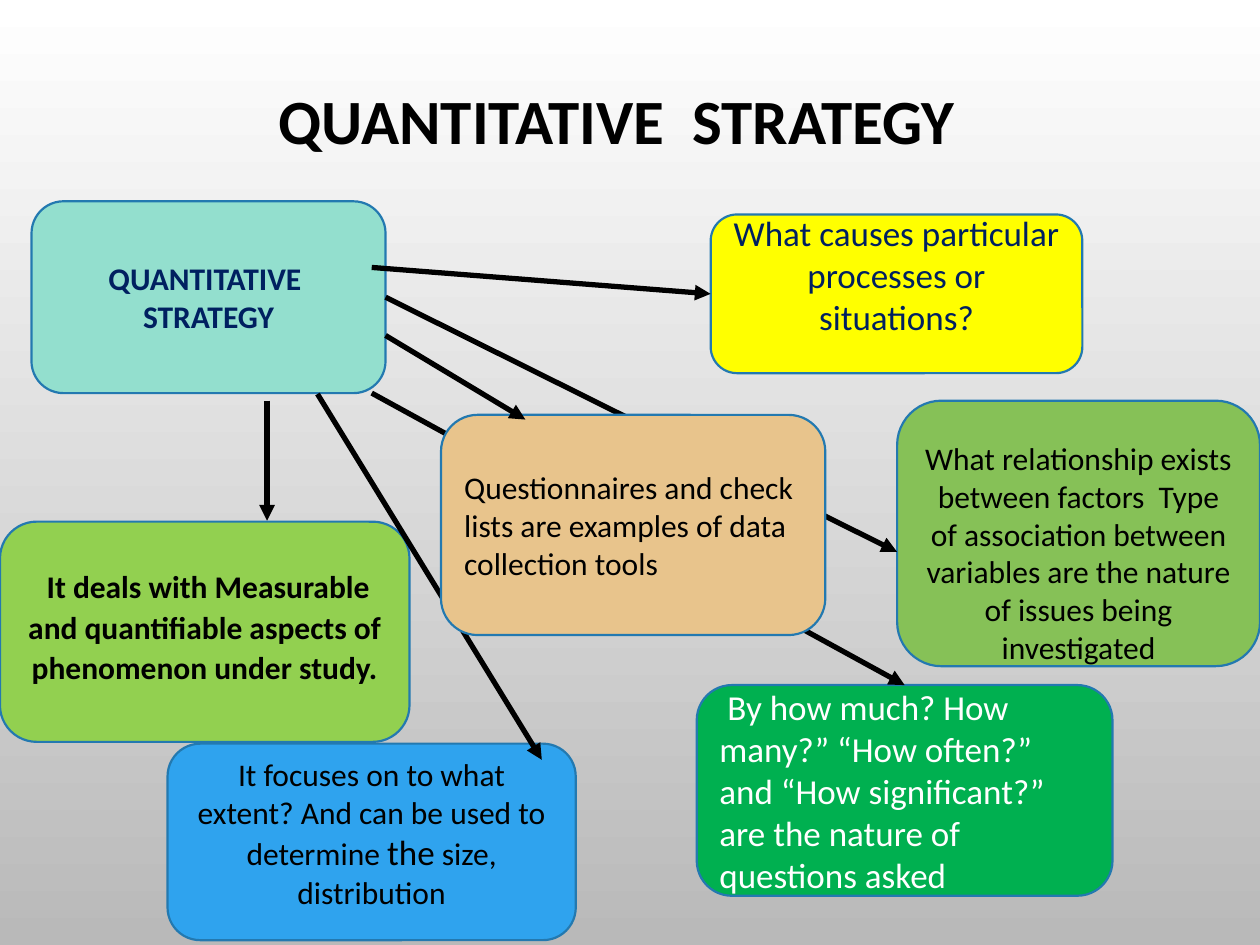
import pptx
import pptx.util
from lxml import etree
from pptx.dml.color import RGBColor
from pptx.enum.shapes import MSO_CONNECTOR, MSO_SHAPE
from pptx.enum.text import MSO_ANCHOR, PP_ALIGN
from pptx.oxml.ns import qn

WIDTH, HEIGHT = pptx.util.Inches(10), pptx.util.Inches(7.5)
FONT = "Calibri"
TOP, LEFT, RIGHT = 0, 1, 3

BLACK = RGBColor(0x00, 0x00, 0x00)
WHITE = RGBColor(0xFF, 0xFF, 0xFF)
GRAY = RGBColor(0xB9, 0xB9, 0xB9)
NAVY = RGBColor(0x00, 0x20, 0x60)
OUTLINE = RGBColor(0x23, 0x79, 0xB0)
TEAL = RGBColor(0x93, 0xDF, 0xCE)
YELLOW = RGBColor(0xFF, 0xFF, 0x00)
LIME = RGBColor(0x92, 0xD0, 0x50)
GREEN = RGBColor(0x00, 0xB0, 0x50)
SAGE = RGBColor(0x86, 0xC1, 0x57)
BLUE = RGBColor(0x2F, 0xA3, 0xEE)
SAND = RGBColor(0xE8, 0xC4, 0x8C)


def across(percent):
    return round(WIDTH * percent / 100)


def down(percent):
    return round(HEIGHT * percent / 100)


def place(left, top, width, height):
    """Turn percentages of the slide into lengths."""
    return across(left), down(top), across(width), down(height)


def format_paragraph(paragraph, size, color, bold, align, spacing=None):
    paragraph.alignment = align
    paragraph.line_spacing = spacing
    font = paragraph.font
    font.name, font.bold = FONT, bold
    font.size = pptx.util.Pt(size)
    font.color.rgb = color


def paint_background(slide):
    fill = slide.background.fill
    fill.gradient()
    fill.gradient_angle = 270
    for stop, color, position in zip(fill.gradient_stops, (WHITE, GRAY), (0, 1)):
        stop.color.rgb = color
        stop.position = position


def add_title(slide, text):
    title = slide.shapes.title
    title.left, title.top, title.width, title.height = place(2.5, 7.5, 92.9, 11.2)
    title.text_frame.text = text
    title.text_frame.vertical_anchor = MSO_ANCHOR.MIDDLE
    format_paragraph(title.text_frame.paragraphs[0], 36, BLACK, True,
                     PP_ALIGN.CENTER, 0.9)


def add_card(slide, area, fill, text, size=18, color=BLACK, bold=False,
             align=PP_ALIGN.CENTER, spacing=None, shift=0, large_word=None):
    """Add a rounded card; shift moves its text down by that many inches."""
    card = slide.shapes.add_shape(MSO_SHAPE.ROUNDED_RECTANGLE, *place(*area))
    card.shadow.inherit = False
    card.fill.solid()
    card.fill.fore_color.rgb = fill
    card.line.color.rgb = OUTLINE
    card.line.width = pptx.util.Pt(1.25)
    frame = card.text_frame
    frame.word_wrap = True
    frame.vertical_anchor = MSO_ANCHOR.MIDDLE
    frame.margin_top = pptx.util.Inches(0.05 + max(0, 2 * shift))
    frame.margin_bottom = pptx.util.Inches(0.05 + max(0, -2 * shift))
    paragraph = frame.paragraphs[0]
    format_paragraph(paragraph, size, color, bold, align, spacing)
    if large_word:
        before, after = text.split(large_word)
        for part in (before, large_word, after):
            run = paragraph.add_run()
            run.text = part
            if part == large_word:
                run.font.size = pptx.util.Pt(size + 2)
    else:
        paragraph.add_run().text = text
    return card


def add_arrow(slide, start, end, source=None, target=None):
    """Draw an arrow; source and target are (card, side) pairs to join."""
    arrow = slide.shapes.add_connector(
        MSO_CONNECTOR.STRAIGHT, across(start[0]), down(start[1]),
        across(end[0]), down(end[1]))
    if source:
        arrow.begin_connect(*source)
    if target:
        arrow.end_connect(*target)
    arrow.line.color.rgb = BLACK
    arrow.line.width = pptx.util.Pt(3)
    etree.SubElement(arrow.line._get_or_add_ln(), qn("a:tailEnd"), type="triangle")
    etree.SubElement(arrow._element.spPr, qn("a:effectLst"))


def main():
    presentation = pptx.Presentation()
    presentation.slide_width, presentation.slide_height = WIDTH, HEIGHT
    slide = presentation.slides.add_slide(presentation.slide_layouts[5])
    paint_background(slide)
    add_title(slide, "QUANTITATIVE  STRATEGY")

    strategy = add_card(slide, (2.5, 21.3, 28.1, 20.3), TEAL,
                        "QUANTITATIVE  STRATEGY", color=NAVY, bold=True)
    causes = add_card(slide, (56.4, 22.7, 29.5, 16.8), YELLOW,
                      "What causes particular processes or situations?",
                      size=20, color=NAVY, shift=-0.15)
    add_card(slide, (0, 55.2, 32.5, 23.3), LIME,
             " It deals with Measurable and quantifiable aspects of "
             "phenomenon under study.", bold=True, spacing=1.07, shift=-0.05)
    questions = add_card(slide, (55.3, 72.5, 33, 22.3), GREEN,
                         " By how much? How many?” “How often?” and “How "
                         "significant?” are the nature of questions asked",
                         size=20, color=WHITE, align=PP_ALIGN.LEFT)
    add_card(slide, (71.2, 42.4, 28.8, 28.1), SAGE,
             "What relationship exists between factors  Type of association "
             "between variables are the nature of issues being investigated",
             shift=0.15)
    add_card(slide, (13.3, 78.7, 32.4, 20.8), BLUE,
             "It focuses on to what extent? And can be used to determine "
             "the size, distribution", shift=-0.07, large_word="the")

    add_arrow(slide, (25.2, 41.7), (43, 80.4))
    add_arrow(slide, (29.5, 28.3), (56.4, 31.1), target=(causes, LEFT))
    add_arrow(slide, (21.2, 42.4), (21.2, 55.1))
    add_arrow(slide, (29.5, 41.6), (71.8, 72.5), target=(questions, TOP))
    add_arrow(slide, (30.6, 31.5), (71.2, 58.4), source=(strategy, RIGHT))

    # The tools card covers the long arrows that pass behind it.
    add_card(slide, (35, 43.9, 30.5, 23.3), SAND,
             "Questionnaires and check lists are examples of data collection "
             "tools", align=PP_ALIGN.LEFT)
    add_arrow(slide, (30.6, 35.5), (41.7, 44.4))

    presentation.save("out.pptx")


if __name__ == "__main__":
    main()
